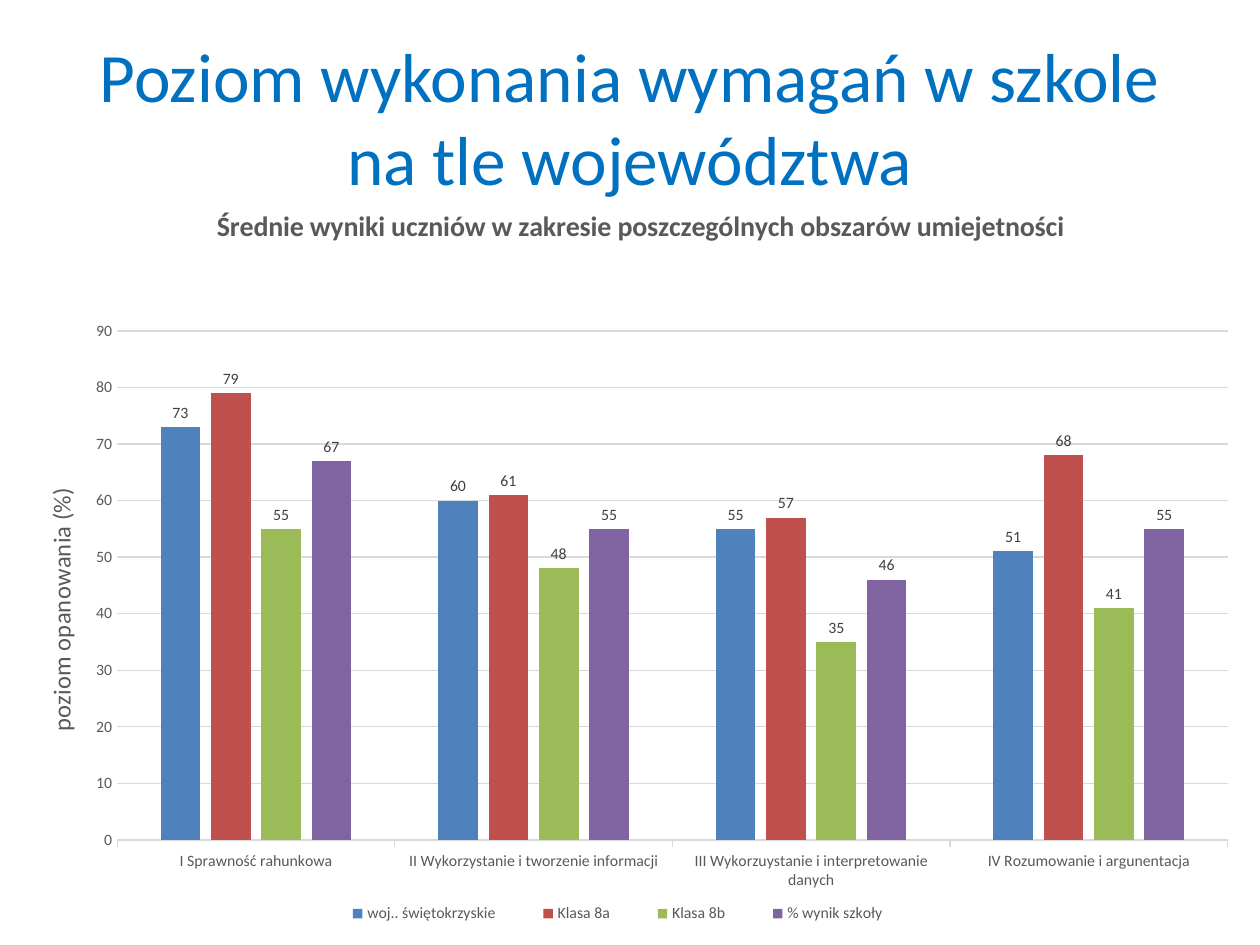
from lxml.etree import SubElement
from pptx import Presentation
from pptx.chart.data import CategoryChartData
from pptx.dml.color import RGBColor
from pptx.enum.chart import XL_CHART_TYPE, XL_LABEL_POSITION, XL_LEGEND_POSITION, XL_TICK_MARK
from pptx.enum.text import MSO_ANCHOR, PP_ALIGN
from pptx.oxml.ns import qn
from pptx.util import Inches, Pt

BLUE = RGBColor(0x00, 0x70, 0xC0)
GRAY = RGBColor(0x59, 0x59, 0x59)
DARK = RGBColor(0x40, 0x40, 0x40)
PALE = RGBColor(0xD9, 0xD9, 0xD9)
FONT = "Calibri"

AREAS = [
    "I Sprawność rahunkowa",
    "II Wykorzystanie i tworzenie informacji",
    "III Wykorzuystanie i interpretowanie danych",
    "IV Rozumowanie i argunentacja",
]
SCORES = [
    ("woj.. świętokrzyskie", (73, 60, 55, 51), RGBColor(0x4F, 0x81, 0xBD)),
    ("Klasa 8a", (79, 61, 57, 68), RGBColor(0xC0, 0x50, 0x4D)),
    ("Klasa 8b", (55, 48, 35, 41), RGBColor(0x9B, 0xBB, 0x59)),
    ("% wynik szkoły", (67, 55, 46, 55), RGBColor(0x80, 0x64, 0xA2)),
]


def write(frame, text, size, color=GRAY, bold=False):
    frame.text = text
    para = frame.paragraphs[0]
    para.alignment = PP_ALIGN.CENTER
    font = para.runs[0].font
    font.name, font.size, font.bold = FONT, Pt(size), bold
    font.color.rgb = color


def place(part, **spots):
    """Pin a chart part by fractions of the chart size, given as x, y, w, h."""
    for old in part.findall(qn("c:layout")):
        part.remove(old)
    layout = SubElement(part, qn("c:layout"))
    manual = SubElement(layout, qn("c:manualLayout"))
    if part.tag == qn("c:plotArea"):
        SubElement(manual, qn("c:layoutTarget")).set("val", "inner")
        part.insert(0, layout)
    else:
        part.find(qn("c:overlay")).addprevious(layout)
    for key in "xy":
        SubElement(manual, qn(f"c:{key}Mode")).set("val", "edge")
    for key, spot in spots.items():
        SubElement(manual, qn(f"c:{key}")).set("val", str(spot))


prs = Presentation()
prs.slide_width, prs.slide_height = Inches(10), Inches(7.5)
slide = prs.slides.add_slide(prs.slide_layouts[6])

# Chart
data = CategoryChartData()
data.categories = AREAS
for name, values, color in SCORES:
    data.add_series(name, values)
chart = slide.shapes.add_chart(
    XL_CHART_TYPE.COLUMN_CLUSTERED,
    Inches(0.12), Inches(1.47), Inches(9.76), Inches(6.57), data,
).chart
chart.font.name, chart.font.size = FONT, Pt(10)

plot = chart.plots[0]
plot.gap_width, plot.overlap = 219, -27
plot.vary_by_categories = False
for series, (name, values, color) in zip(plot.series, SCORES):
    series.format.fill.solid()
    series.format.fill.fore_color.rgb = color
    series.invert_if_negative = False
    labels = series.data_labels
    labels.show_value = True
    labels.position = XL_LABEL_POSITION.OUTSIDE_END
    labels.font.name, labels.font.size = FONT, Pt(9)
    labels.font.color.rgb = DARK

# Axes and legend
areas, level = chart.category_axis, chart.value_axis
chart.has_legend = True
legend = chart.legend
legend.position = XL_LEGEND_POSITION.BOTTOM
legend.include_in_layout = False
for part in (areas.tick_labels, level.tick_labels, legend):
    part.font.name, part.font.size = FONT, Pt(9)
    part.font.color.rgb = GRAY

areas.major_tick_mark = XL_TICK_MARK.OUTSIDE
level.major_tick_mark = XL_TICK_MARK.NONE
level.minimum_scale, level.maximum_scale, level.major_unit = 0, 90, 10
level.has_major_gridlines = True
for line in (areas.format.line, level.major_gridlines.format.line):
    line.color.rgb = PALE
    line.width = Pt(0.75)
level.format.line.fill.background()

# Chart titles
heading, side = chart.chart_title, level.axis_title
write(heading.text_frame, "Średnie wyniki uczniów w zakresie poszczególnych obszarów umiejetności",
      size=16, bold=True)
write(side.text_frame, "poziom opanowania (%)", size=14)
turn = side._element.find(".//" + qn("a:bodyPr"))
turn.set("rot", "-5400000")
turn.set("vert", "horz")

place(chart._chartSpace.find(".//" + qn("c:plotArea")), x=0.083, y=0.176, w=0.903, h=0.615)
place(heading._element, x=0.16, y=0.02)
place(side._element, x=0.02, y=0.36)
place(legend._element, x=0.24, y=0.86, w=0.5, h=0.04)

# Slide title
box = slide.shapes.add_textbox(Inches(0.5), Inches(0.3), Inches(9), Inches(1.25))
box.text_frame.word_wrap = True
box.text_frame.vertical_anchor = MSO_ANCHOR.MIDDLE
write(box.text_frame, "Poziom wykonania wymagań w szkole na tle województwa",
      size=39.6, color=BLUE)

prs.save("out.pptx")
